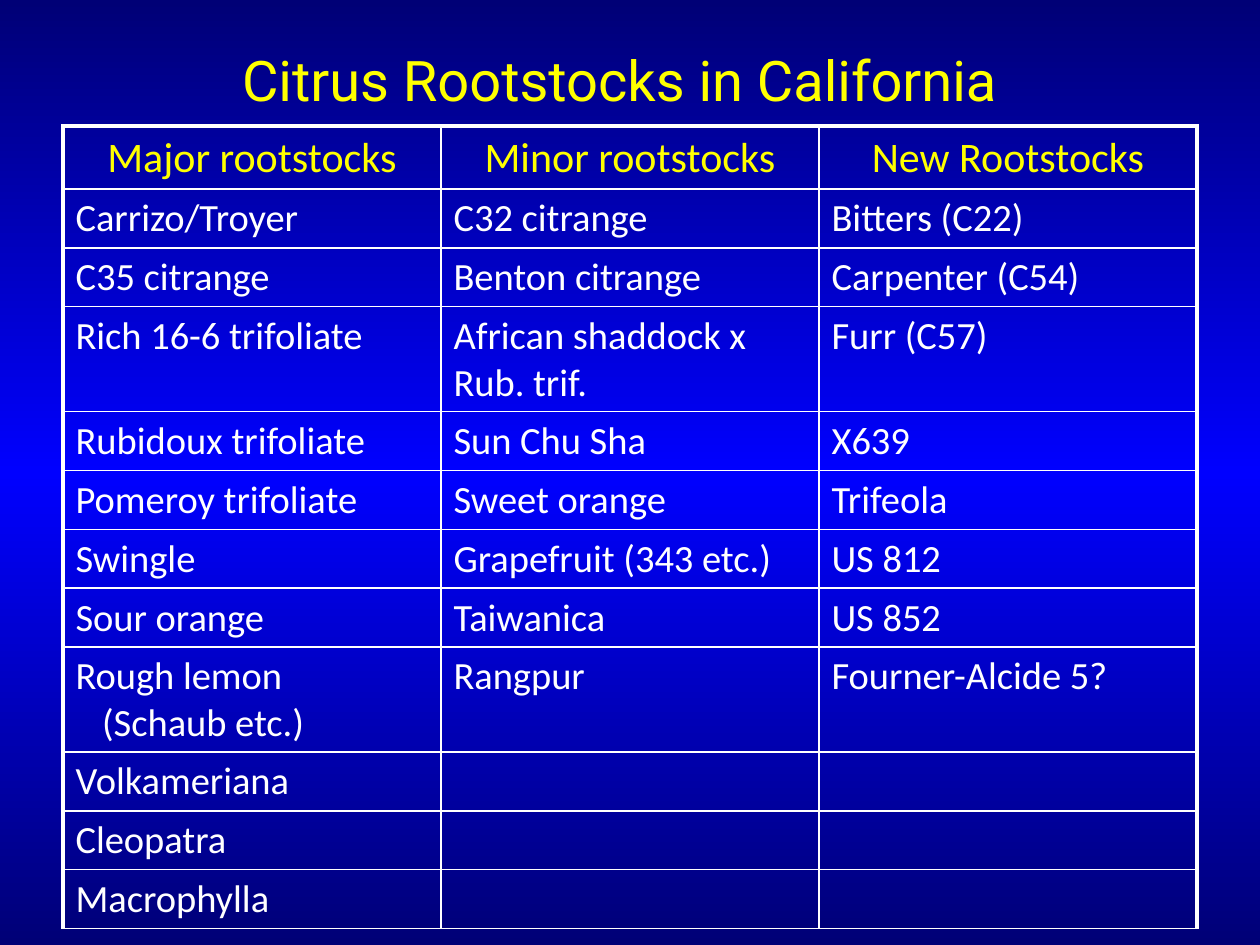
from collections import namedtuple
from copy import deepcopy

from lxml.etree import SubElement
from pptx import Presentation
from pptx.dml.color import RGBColor
from pptx.enum.text import MSO_ANCHOR, PP_ALIGN
from pptx.oxml.ns import qn
from pptx.util import Inches, Pt

Theme = namedtuple("Theme", "yellow white dark_blue blue title_font table_font "
                            "title_size header_size body_size outer_line inner_line")
theme = Theme("FFFF00", "FFFFFF", "000076", "0000FF", "Roboto", "Calibri",
              Pt(32), Pt(24), Pt(22), Pt(2.25), Pt(1))

ROWS = [
    ("Major rootstocks", "Minor rootstocks", "New Rootstocks"),
    ("Carrizo/Troyer", "C32 citrange", "Bitters (C22)"),
    ("C35 citrange", "Benton citrange", "Carpenter (C54)"),
    ("Rich 16-6 trifoliate", "African shaddock x Rub. trif.", "Furr (C57)"),
    ("Rubidoux trifoliate", "Sun Chu Sha", "X639"),
    ("Pomeroy trifoliate", "Sweet orange", "Trifeola"),
    ("Swingle", "Grapefruit (343 etc.)", "US 812"),
    ("Sour orange", "Taiwanica", "US 852"),
    ("Rough lemon\v(Schaub etc.)", "Rangpur", "Fourner-Alcide 5?"),
    ("Volkameriana", "", ""),
    ("Cleopatra", "", ""),
    ("Macrophylla", "", ""),
]


def style_text(para, color, align, **font_values):
    para.alignment = align
    para.font.color.rgb = RGBColor.from_string(color)
    for span in para.runs:
        span.font.color.rgb = RGBColor.from_string(color)
        for name, value in font_values.items():
            setattr(span.font, name, value)


def add_border(cell, side, width):
    line = SubElement(cell._tc.get_or_add_tcPr(), qn(f"a:ln{side}"), w=str(width))
    fill = SubElement(line, qn("a:solidFill"))
    SubElement(fill, qn("a:srgbClr"), val=theme.white)


deck = Presentation()
deck.slide_width, deck.slide_height = Inches(10), Inches(7.5)
slide = deck.slides.add_slide(deck.slide_layouts[6])

# Background: dark at both ends, bright in the middle
background = slide.background.fill
background.gradient()
background.gradient_angle = 90
stop_list = slide._element.find(".//" + qn("a:gsLst"))
stop_list.append(deepcopy(stop_list[-1]))
stop_colors = (theme.dark_blue, theme.blue, theme.dark_blue)
for stop, position, color in zip(background.gradient_stops, (0, 0.5, 1), stop_colors):
    stop.position = position
    stop.color.rgb = RGBColor.from_string(color)

# Title
title_box = slide.shapes.add_textbox(Inches(0.67), Inches(0), Inches(8.5), Inches(1.25))
title_frame = title_box.text_frame
title_frame.word_wrap = True
title_frame.vertical_anchor = MSO_ANCHOR.MIDDLE
title_frame.text = "Citrus Rootstocks in California"
style_text(title_frame.paragraphs[0], theme.yellow, PP_ALIGN.CENTER,
           name=theme.title_font, size=theme.title_size)

# Rootstock table
row_count, column_count = len(ROWS), len(ROWS[0])
table = slide.shapes.add_table(row_count, column_count, Inches(0.5), Inches(1),
                               Inches(9), Inches(0.46) * row_count).table
table.first_row = table.horz_banding = False
table.rows[0].height = Inches(0.48)

for row_index, row in enumerate(ROWS):
    is_header = row_index == 0
    for column_index, text in enumerate(row):
        cell = table.cell(row_index, column_index)
        cell.text = text
        para = cell.text_frame.paragraphs[0]
        style_text(para, theme.yellow if is_header else theme.white,
                   PP_ALIGN.CENTER if is_header else PP_ALIGN.LEFT,
                   name=theme.table_font,
                   size=theme.header_size if is_header else theme.body_size)
        if "\v" in text:
            # Hanging indent sets the second line in
            indent = Inches(0.21)
            properties = para._p.get_or_add_pPr()
            properties.set("marL", str(indent))
            properties.set("indent", str(-indent))
        outer_sides = {"L": column_index == 0, "R": column_index == column_count - 1,
                       "T": is_header, "B": False}
        for side, is_outer in outer_sides.items():
            add_border(cell, side, theme.outer_line if is_outer else theme.inner_line)
        cell.fill.background()

deck.save("out.pptx")
